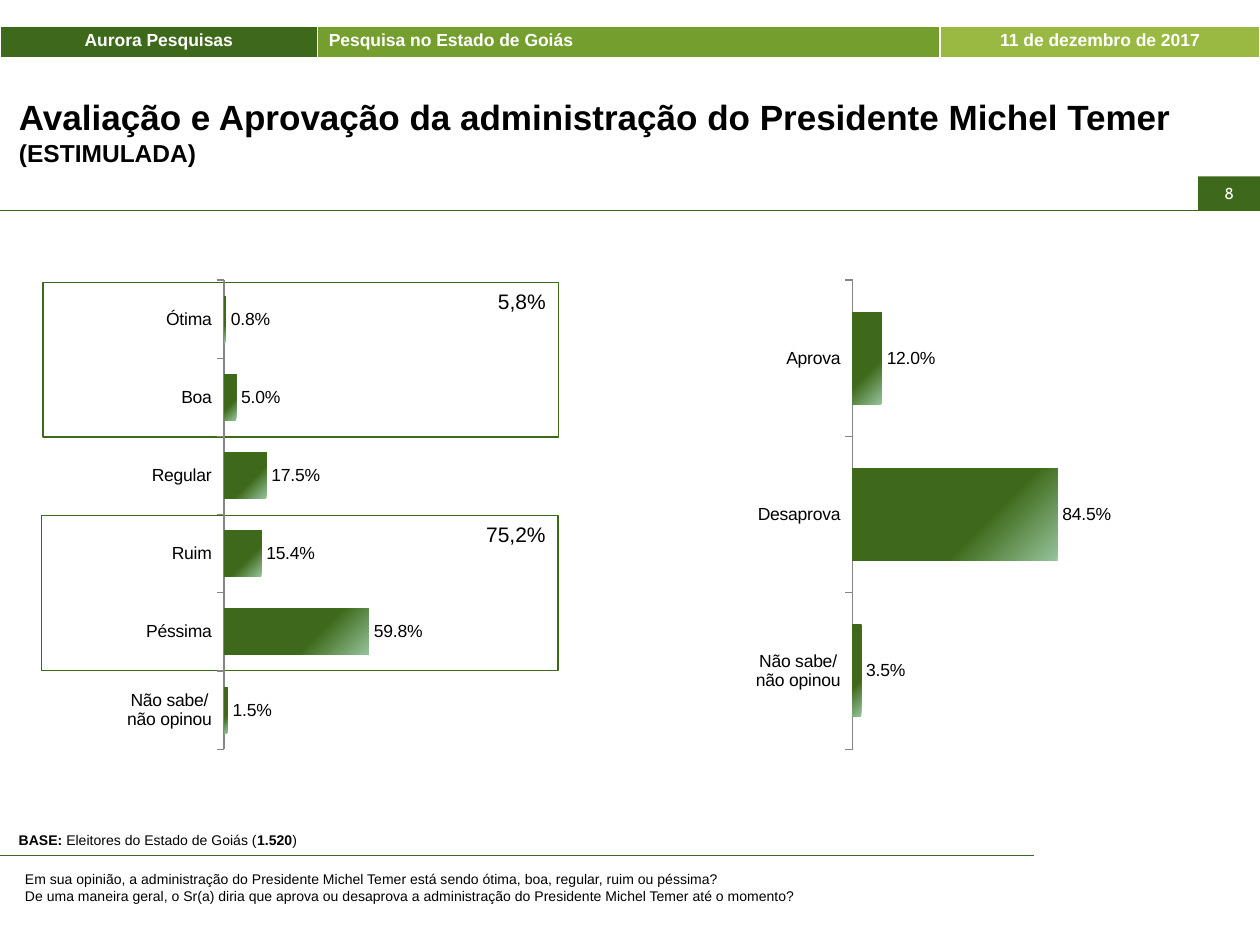
from lxml import etree
from pptx import Presentation
from pptx.chart.data import CategoryChartData
from pptx.dml.color import RGBColor
from pptx.enum.chart import XL_CHART_TYPE, XL_LABEL_POSITION, XL_TICK_LABEL_POSITION, XL_TICK_MARK
from pptx.enum.shapes import MSO_CONNECTOR, MSO_SHAPE
from pptx.enum.text import MSO_ANCHOR, PP_ALIGN
from pptx.oxml import parse_xml
from pptx.oxml.ns import nsdecls, qn
from pptx.util import Inches, Pt

BAR = XL_CHART_TYPE.BAR_CLUSTERED
OUT_END = XL_LABEL_POSITION.OUTSIDE_END
NO_LABEL = XL_TICK_LABEL_POSITION.NONE
TICK_OUT = XL_TICK_MARK.OUTSIDE
LINE = MSO_CONNECTOR.STRAIGHT
RECT = MSO_SHAPE.RECTANGLE
TOP, MIDDLE = MSO_ANCHOR.TOP, MSO_ANCHOR.MIDDLE
LEFT, CENTER, RIGHT, JUSTIFY = PP_ALIGN.LEFT, PP_ALIGN.CENTER, PP_ALIGN.RIGHT, PP_ALIGN.JUSTIFY

COLORS = {
    "dark": "3E691A",
    "mid": "749E2E",
    "lime": "9AB942",
    "mint": "96C49B",
    "gray": "868686",
    "black": "000000",
    "white": "FFFFFF",
}
NONE = "Não sabe/\nnão opinou"
RATES = {"Ótima": 0.008, "Boa": 0.05, "Regular": 0.175,
         "Ruim": 0.154, "Péssima": 0.598, NONE: 0.015}
VOTES = {"Aprova": 0.12, "Desaprova": 0.845, NONE: 0.035}


def rgb(name):
    return RGBColor.from_string(COLORS[name])


def style(font, size, color="black", bold=None, name="Arial"):
    font.name = name
    font.size = Pt(size)
    font.bold = bold
    font.color.rgb = rgb(color)


def inset(frame, x, y):
    frame.margin_left = frame.margin_right = Inches(x)
    frame.margin_top = frame.margin_bottom = Inches(y)


def add_header(slide):
    cells = [
        ("Aurora Pesquisas", 2.52, "dark", CENTER),
        ("Pesquisa no Estado de Goiás", 4.94, "mid", LEFT),
        ("11 de dezembro de 2017", 2.54, "lime", CENTER),
    ]
    table = slide.shapes.add_table(
        1, len(cells), 0, Inches(0.21), Inches(10), Inches(0.25)).table
    for i, (text, width, color, align) in enumerate(cells):
        table.columns[i].width = Inches(width)
        cell = table.cell(0, i)
        cell.fill.solid()
        cell.fill.fore_color.rgb = rgb(color)
        inset(cell, 0.09, 0.05)
        para = cell.text_frame.paragraphs[0]
        para.text = text
        para.alignment = align
        para.line_spacing = 0.9
        style(para.font, 10, "white", True)
        sides = ["lnL"] * (i > 0) + ["lnR"] * (i < len(cells) - 1)
        for n, side in enumerate(sides):
            cell._tc.get_or_add_tcPr().insert(n, parse_xml(
                f'<a:{side} {nsdecls("a")} w="12700"><a:solidFill>'
                f'<a:srgbClr val="{COLORS["white"]}"/></a:solidFill></a:{side}>'))


def add_line(slide, y, end):
    line = slide.shapes.add_connector(LINE, 0, Inches(y), Inches(end), Inches(y))
    line.line.color.rgb = rgb("dark")
    line.line.width = Pt(0.75)
    etree.SubElement(line._element.spPr, qn("a:effectLst"))


def set_title(slide):
    title = slide.shapes.title
    title.left, title.top = Inches(0.15), Inches(0.51)
    title.width, title.height = Inches(9.33), Inches(1.07)
    frame = title.text_frame
    frame.word_wrap = True
    frame.vertical_anchor = MIDDLE
    inset(frame, 0, 0)
    para = frame.paragraphs[0]
    para.alignment = LEFT
    parts = [("Avaliação e Aprovação da administração do Presidente Michel Temer ", 20),
             ("(ESTIMULADA)", 14)]
    for text, size in parts:
        run = para.add_run()
        run.text = text
        style(run.font, size, bold=True)


def add_rect(slide, x, y, w, h, text, align):
    box = slide.shapes.add_shape(RECT, Inches(x), Inches(y), Inches(w), Inches(h))
    box.shadow.inherit = False
    para = box.text_frame.paragraphs[0]
    para.text = text
    para.alignment = align
    return box


def add_page(slide):
    box = add_rect(slide, 9.51, 1.4, 0.49, 0.27, "8", CENTER)
    box.fill.solid()
    box.fill.fore_color.rgb = rgb("dark")
    box.line.fill.background()
    inset(box.text_frame, 0.04, 0.04)
    box.text_frame.vertical_anchor = MIDDLE
    style(box.text_frame.paragraphs[0].font, 9, "white", name="Cabin")


def add_group(slide, x, y, w, text):
    box = add_rect(slide, x, y, w, 1.23, text, RIGHT)
    box.fill.background()
    box.line.color.rgb = rgb("dark")
    box.line.width = Pt(0.75)
    box.text_frame.vertical_anchor = TOP
    style(box.text_frame.paragraphs[0].font, 12)


def add_text(slide, x, y, w, h, paras, align, wrap):
    frame = slide.shapes.add_textbox(
        Inches(x), Inches(y), Inches(w), Inches(h)).text_frame
    frame.word_wrap = wrap
    for i, runs in enumerate(paras):
        para = frame.add_paragraph() if i else frame.paragraphs[0]
        para.alignment = align
        style(para.font, 8)
        for text, bold in runs:
            run = para.add_run()
            run.text = text
            style(run.font, 8, bold=bold)


def set_plot(chart):
    area = chart._chartSpace.chart.plotArea
    for old in area.findall(qn("c:layout")):
        area.remove(old)
    spots = {"x": 0.327, "y": 0.038, "w": 0.553, "h": 0.924}
    modes = '<c:xMode val="edge"/><c:yMode val="edge"/>'
    sizes = "".join(f'<c:{key} val="{val}"/>' for key, val in spots.items())
    area.insert(0, parse_xml(
        f'<c:layout {nsdecls("c")}><c:manualLayout><c:layoutTarget val="inner"/>'
        f'{modes}{sizes}</c:manualLayout></c:layout>'))


def add_bars(slide, x, values):
    data = CategoryChartData(number_format="0.0%")
    data.categories = list(values)
    data.add_series("Series 1", list(values.values()))
    chart = slide.shapes.add_chart(
        BAR, Inches(x), Inches(2.07), Inches(3.48), Inches(4.03), data).chart
    chart.has_legend = chart.has_title = False
    style(chart.font, 11, name="Cabin")
    set_plot(chart)

    cats = chart.category_axis
    cats.reverse_order = True
    cats.major_tick_mark = TICK_OUT
    cats.format.line.color.rgb = rgb("gray")
    style(cats.tick_labels.font, 10)
    scale = chart.value_axis
    scale.minimum_scale, scale.maximum_scale = 0, 1
    scale.has_major_gridlines = False
    scale.tick_label_position = NO_LABEL
    scale.format.line.fill.background()

    plot = chart.plots[0]
    plot.gap_width = 70
    plot.vary_by_categories = False
    fill = plot.series[0].format.fill
    fill.gradient()
    fill.gradient_angle = 135
    for stop, (spot, color) in zip(fill.gradient_stops, [(0, "mint"), (0.38, "dark")]):
        stop.position = spot
        stop.color.rgb = rgb(color)
    plot.has_data_labels = True
    labels = plot.data_labels
    labels.show_value = True
    labels.position = OUT_END
    labels.number_format = "0.0%"
    labels.number_format_is_linked = False
    style(labels.font, 10)


def main():
    deck = Presentation()
    deck.slide_width, deck.slide_height = Inches(10), Inches(7.5)
    slide = deck.slides.add_slide(deck.slide_layouts[5])
    add_line(slide, 1.67, 10)
    add_header(slide)
    add_line(slide, 6.79, 8.21)
    add_page(slide)
    set_title(slide)
    asks = [
        "Em sua opinião, a administração do Presidente Michel Temer está sendo "
        "ótima, boa, regular, ruim ou péssima?",
        "De uma maneira geral, o Sr(a) diria que aprova ou desaprova a "
        "administração do Presidente Michel Temer até o momento?",
    ]
    add_text(slide, 0.1, 6.86, 7.64, 0.37, [[(ask, None)] for ask in asks], JUSTIFY, True)
    add_group(slide, 0.34, 2.24, 4.09, "5,8%")
    add_group(slide, 0.33, 4.09, 4.1, "75,2%")
    base = [("BASE:", True), (" Eleitores do Estado de Goiás (", False),
            ("1.520", True), (")", False)]
    add_text(slide, 0.05, 6.55, 2.44, 0.24, [base], LEFT, False)
    add_bars(slide, 5.63, VOTES)
    add_bars(slide, 0.64, RATES)
    deck.save("out.pptx")


if __name__ == "__main__":
    main()
